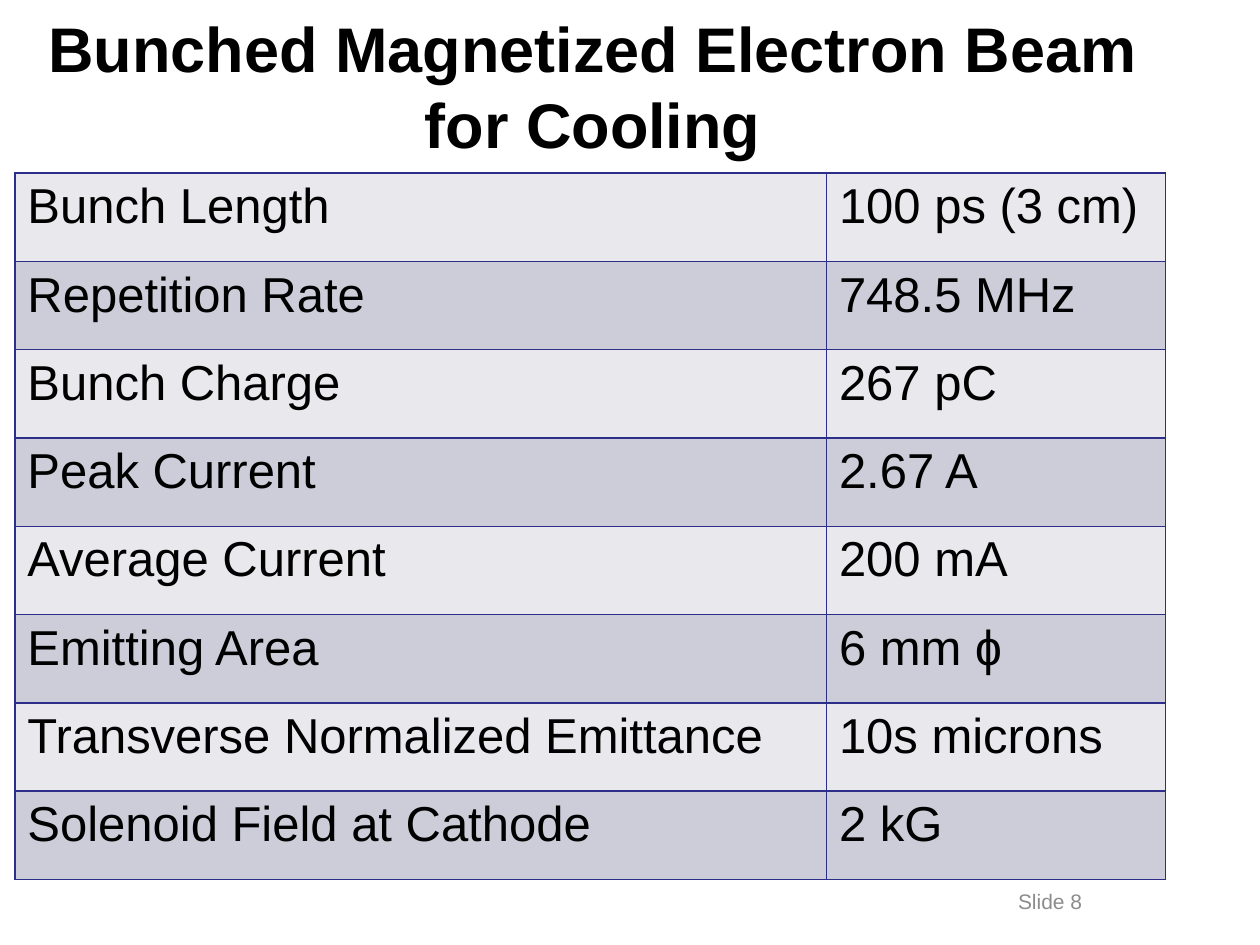
from lxml import etree
from pptx import Presentation
from pptx.dml.color import RGBColor
from pptx.enum.text import MSO_ANCHOR, MSO_AUTO_SIZE, PP_ALIGN
from pptx.oxml.ns import qn
from pptx.util import Cm, Pt

CENTER = PP_ALIGN.CENTER
MIDDLE = MSO_ANCHOR.MIDDLE
NO_AUTOFIT = MSO_AUTO_SIZE.NONE
TITLE_ONLY = 5
FONT = "Arial"
BLACK, GRAY, BORDER = "000000", "8C8C8C", "2D2D8A"
BANDS = ("E8E8ED", "CDCDDA")
COLUMN_WIDTHS = (16.36, 6.83)
ROW_HEIGHT = 1.78
PARAMETERS = (
    ("Bunch Length", "100 ps (3 cm)"),
    ("Repetition Rate", "748.5 MHz"),
    ("Bunch Charge", "267 pC"),
    ("Peak Current", "2.67 A"),
    ("Average Current", "200 mA"),
    ("Emitting Area", "6 mm ɸ"),
    ("Transverse Normalized Emittance", "10s microns"),
    ("Solenoid Field at Cathode", "2 kG"),
)


def color(value):
    """Return the colour for a hex string."""
    return RGBColor.from_string(value)


def write(tf, text, size, fill=BLACK, bold=False):
    """Set the text of a frame and format its run."""
    tf.text = text
    font = tf.paragraphs[0].runs[0].font
    font.name, font.size, font.bold = FONT, Pt(size), bold
    font.color.rgb = color(fill)


def center(tf):
    """Centre a wrapped frame both ways."""
    tf.word_wrap = True
    tf.auto_size = NO_AUTOFIT
    tf.vertical_anchor = MIDDLE
    tf.paragraphs[0].alignment = CENTER


def add_title(s, text):
    """Place and fill the title placeholder."""
    sp = s.shapes.title
    sp.left, sp.top, sp.width, sp.height = Cm(0.4), Cm(0), Cm(23.1), Cm(3.45)
    write(sp.text_frame, text, 36, bold=True)
    center(sp.text_frame)


def set_borders(cell):
    """Draw a thin line on each side of a cell."""
    props = cell._tc.get_or_add_tcPr()
    for i, side in enumerate(("a:lnL", "a:lnR", "a:lnT", "a:lnB")):
        ln = etree.Element(qn(side), w=str(Pt(1)))
        fill = etree.SubElement(ln, qn("a:solidFill"))
        etree.SubElement(fill, qn("a:srgbClr"), val=BORDER)
        props.insert(i, ln)


def add_parameter_table(s):
    """Add the banded table of beam parameters."""
    frame = s.shapes.add_table(
        len(PARAMETERS), len(COLUMN_WIDTHS), Cm(0.3), Cm(3.49),
        Cm(sum(COLUMN_WIDTHS)), Cm(ROW_HEIGHT * len(PARAMETERS)))
    table = frame.table
    table.first_row = False
    for column, width in zip(table.columns, COLUMN_WIDTHS):
        column.width = Cm(width)
    for i, values in enumerate(PARAMETERS):
        table.rows[i].height = Cm(ROW_HEIGHT)
        for cell, value in zip(table.rows[i].cells, values):
            write(cell.text_frame, value, 28)
            cell.fill.solid()
            cell.fill.fore_color.rgb = color(BANDS[i % 2])
            set_borders(cell)


def add_slide_label(s, text):
    """Add the slide number label at the foot."""
    sp = s.shapes.add_textbox(Cm(18.21), Cm(17.65), Cm(5.92), Cm(1.02))
    write(sp.text_frame, text, 12, GRAY)
    center(sp.text_frame)


def main():
    """Build and save the slide."""
    prs = Presentation()
    prs.slide_width, prs.slide_height = Cm(25.4), Cm(19.05)
    s = prs.slides.add_slide(prs.slide_layouts[TITLE_ONLY])
    add_title(s, "Bunched Magnetized Electron Beam for Cooling")
    add_parameter_table(s)
    add_slide_label(s, "Slide 8")
    prs.save("out.pptx")


if __name__ == "__main__":
    main()
